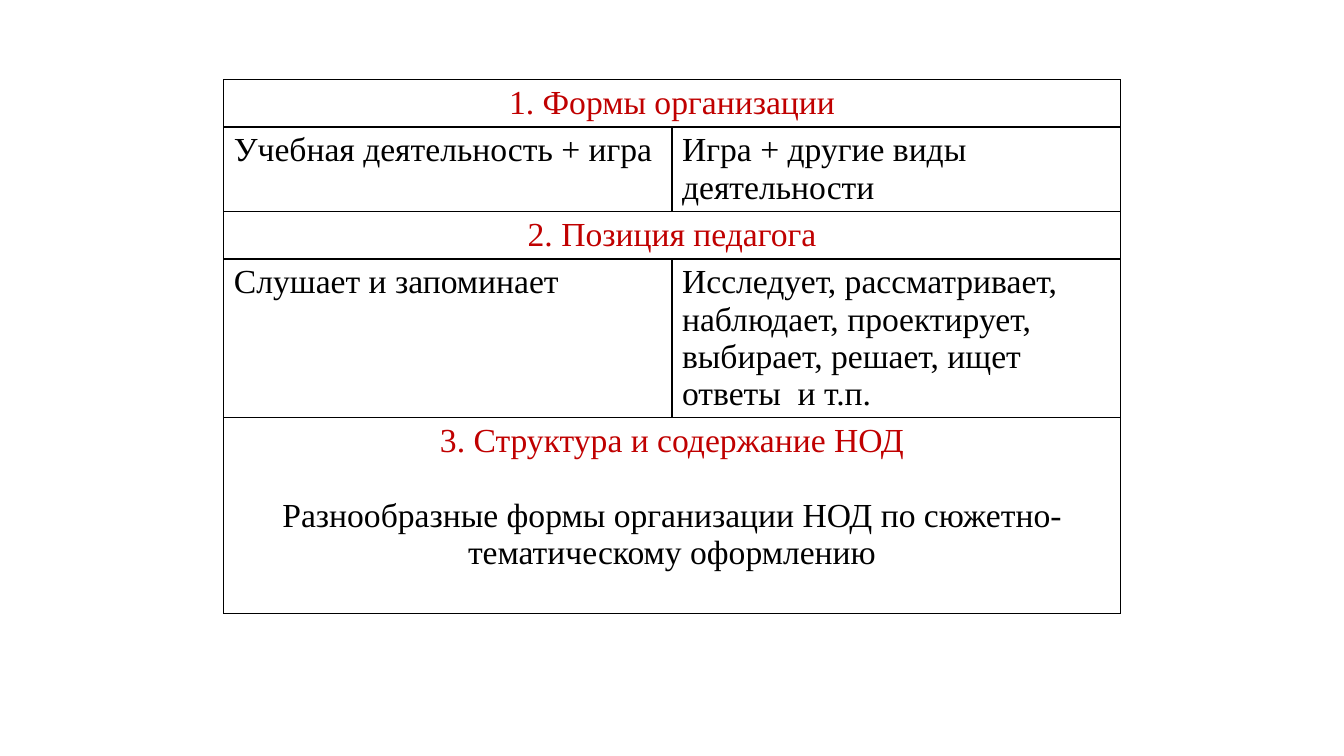
from lxml.etree import SubElement
from pptx import Presentation
from pptx.dml.color import RGBColor
from pptx.enum.text import PP_ALIGN
from pptx.oxml.ns import qn
from pptx.util import Inches, Pt

BLACK = "000000"
RED = "C00000"
LINE_HEIGHT = 26.6

# Each row: height, then one list of (text, colour) paragraphs per cell.
ROWS = [
    (0.47, [[("1. Формы организации", RED)]]),
    (0.84, [[("Учебная деятельность + игра", BLACK)],
            [("Игра + другие виды деятельности", BLACK)]]),
    (0.47, [[("2. Позиция педагога", RED)]]),
    (1.57, [[("Слушает и запоминает", BLACK)],
            [("Исследует, рассматривает, наблюдает, проектирует, выбирает, "
              "решает, ищет ответы  и т.п.", BLACK)]]),
    (1.94, [[("3. Структура и содержание НОД", RED),
             ("Разнообразные формы организации НОД по "
              "сюжетно-тематическому оформлению", BLACK)]]),
]


def color(value):
    return RGBColor.from_string(value)


def add_borders(cell):
    """Draw a thin black line on all four sides, ahead of the cell fill."""
    properties = cell._tc.get_or_add_tcPr()
    for position, side in enumerate(("a:lnL", "a:lnR", "a:lnT", "a:lnB")):
        border = SubElement(properties, qn(side), w=str(Pt(1)))
        fill = SubElement(border, qn("a:solidFill"))
        SubElement(fill, qn("a:srgbClr"), val=BLACK)
        properties.insert(position, border)


def write_cell(cell, paragraphs, alignment):
    for number, (text, text_color) in enumerate(paragraphs):
        frame = cell.text_frame
        paragraph = frame.add_paragraph() if number else frame.paragraphs[0]
        paragraph.alignment = alignment
        if number:
            paragraph.space_before = Pt(LINE_HEIGHT)
        run = paragraph.add_run()
        run.text = text
        for name, value in {"name": "Times New Roman", "size": Pt(24),
                            "bold": False}.items():
            setattr(run.font, name, value)
        run.font.color.rgb = color(text_color)


def add_comparison(slide):
    height = sum(row_height for row_height, _ in ROWS)
    table = slide.shapes.add_table(
        len(ROWS), 2, Inches(2.22), Inches(0.79), Inches(8.89), Inches(height)
    ).table
    table.first_row = False
    table.horz_banding = False
    for index, (row_height, contents) in enumerate(ROWS):
        table.rows[index].height = Inches(row_height)
        for cell in table.rows[index].cells:
            cell.fill.background()
            add_borders(cell)
        is_heading = len(contents) == 1
        if is_heading:
            table.cell(index, 0).merge(table.cell(index, 1))
        alignment = PP_ALIGN.CENTER if is_heading else PP_ALIGN.LEFT
        for column, paragraphs in enumerate(contents):
            write_cell(table.cell(index, column), paragraphs, alignment)


def main():
    presentation = Presentation()
    presentation.slide_width = Inches(13.33)
    presentation.slide_height = Inches(7.5)
    slide = presentation.slides.add_slide(presentation.slide_layouts[6])
    add_comparison(slide)
    presentation.save("out.pptx")


if __name__ == "__main__":
    main()
